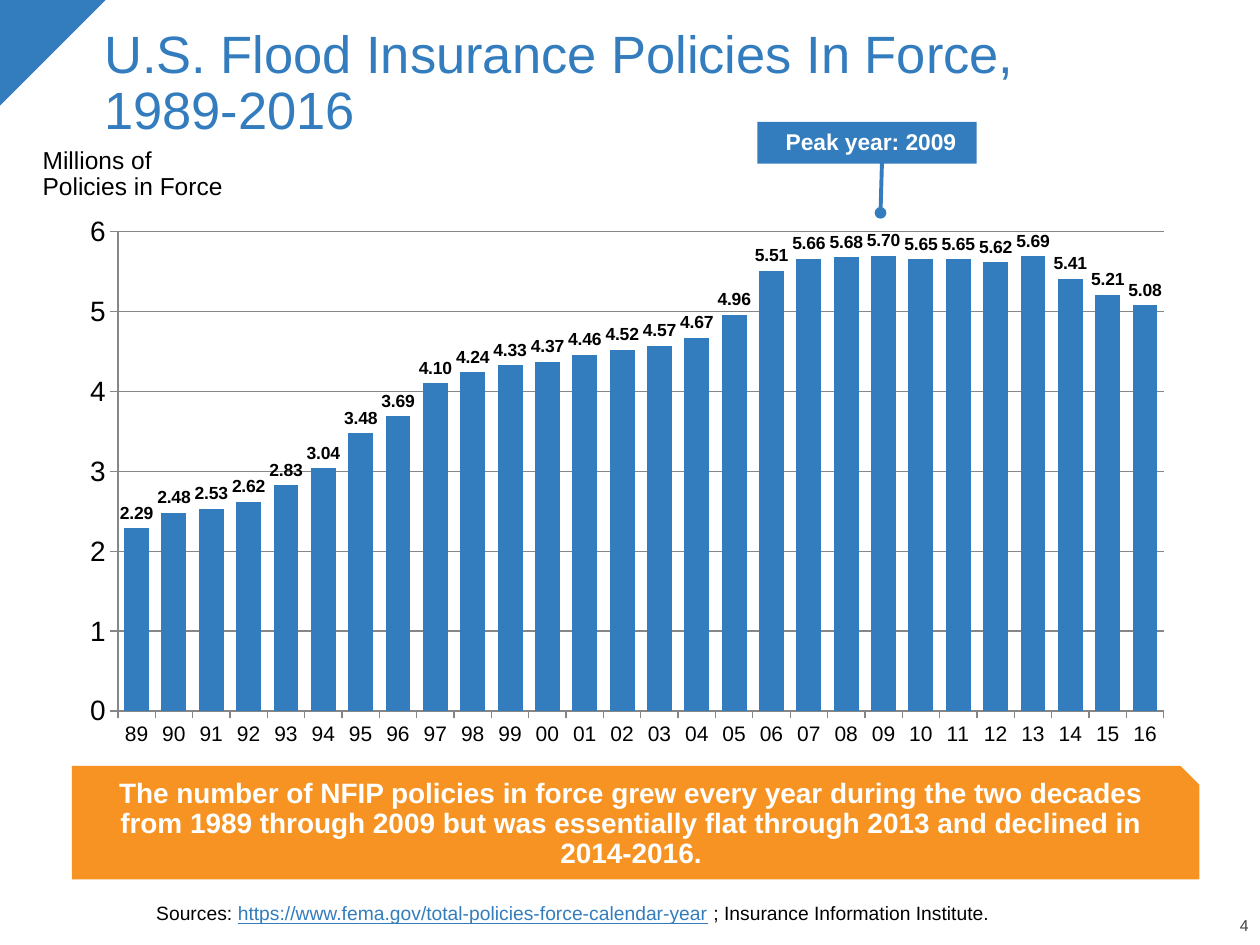
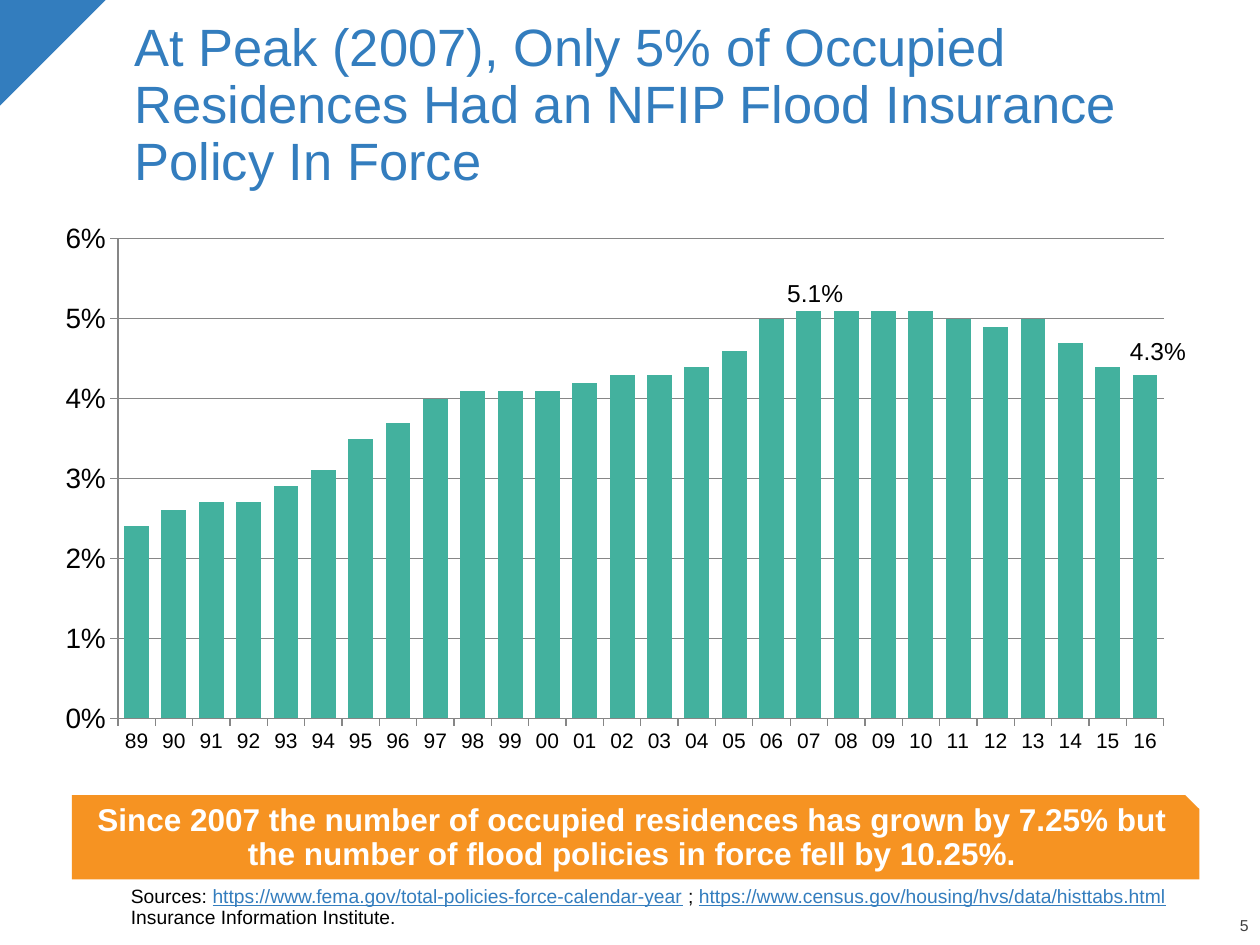
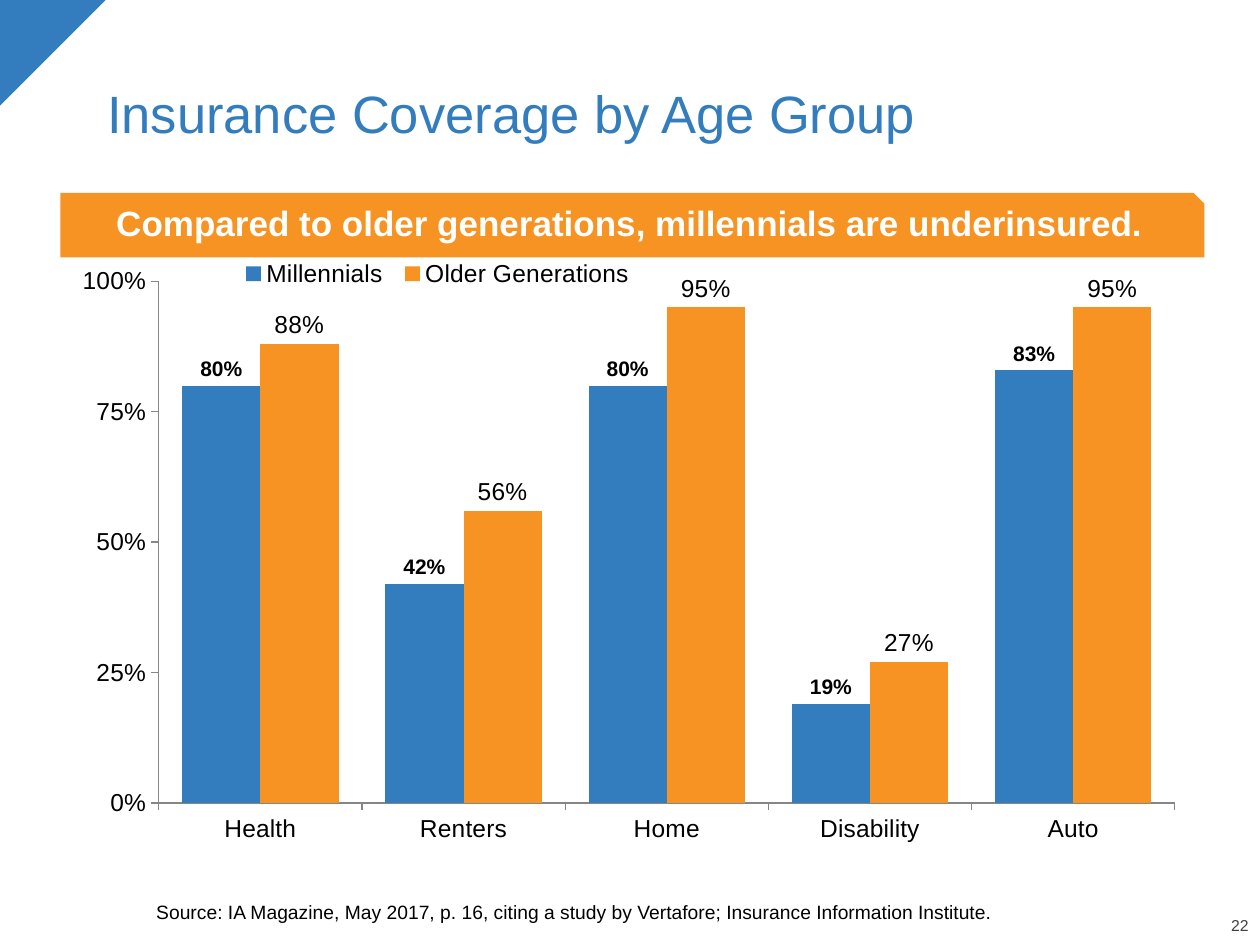
"""Build three slides on flood insurance policies and insurance coverage by age."""
from dataclasses import dataclass
from typing import NamedTuple, Optional

from lxml import etree
from pptx import Presentation
from pptx.chart.data import CategoryChartData
from pptx.dml.color import RGBColor
from pptx.enum.chart import (XL_CHART_TYPE, XL_LABEL_POSITION, XL_LEGEND_POSITION,
                             XL_TICK_LABEL_POSITION, XL_TICK_MARK)
from pptx.enum.shapes import MSO_CONNECTOR, MSO_SHAPE
from pptx.enum.text import MSO_ANCHOR, PP_ALIGN
from pptx.oxml.ns import qn
from pptx.util import Cm, Pt

COLUMNS = XL_CHART_TYPE.COLUMN_CLUSTERED
OUTSIDE_END = XL_LABEL_POSITION.OUTSIDE_END
LEGEND_TOP = XL_LEGEND_POSITION.TOP
LABELS_LOW = XL_TICK_LABEL_POSITION.LOW
TICK_OUT, TICK_NONE = XL_TICK_MARK.OUTSIDE, XL_TICK_MARK.NONE
STRAIGHT = MSO_CONNECTOR.STRAIGHT
TRIANGLE, SNIPPED, RECTANGLE = (MSO_SHAPE.RIGHT_TRIANGLE, MSO_SHAPE.SNIP_1_RECTANGLE,
                                MSO_SHAPE.RECTANGLE)
TOP, MIDDLE, BOTTOM = MSO_ANCHOR.TOP, MSO_ANCHOR.MIDDLE, MSO_ANCHOR.BOTTOM
LEFT, CENTER, RIGHT = PP_ALIGN.LEFT, PP_ALIGN.CENTER, PP_ALIGN.RIGHT

COLORS = {"blue": "337DBE", "orange": "F69322", "teal": "43B19E", "white": "FFFFFF",
          "black": "000000", "number": "404040", "axis": "868686"}
FONT = "Arial"
FEMA = "https://www.fema.gov/total-policies-force-calendar-year"
CENSUS = "https://www.census.gov/housing/hvs/data/histtabs.html"
YEARS = [f"{year % 100:02d}" for year in range(1989, 2017)]


class Box(NamedTuple):
    left: float
    top: float
    width: float
    height: float

    def lengths(self) -> list:
        return [Cm(value) for value in self]


class Layout(NamedTuple):
    x: float
    y: float
    w: float
    h: float


class Style(NamedTuple):
    size: float
    color: str = "black"
    bold: bool = False
    align: PP_ALIGN = LEFT
    anchor: MSO_ANCHOR = MIDDLE
    insets: tuple = (0.25, 0.13, 0.25, 0.13)


class Series(NamedTuple):
    name: str
    values: list
    color: str
    label_size: Optional[float] = None
    label_bold: bool = False


@dataclass
class ColumnChart:
    box: Box
    plot: Layout
    categories: list
    series: list
    maximum: float
    step: float
    axis_format: str
    label_format: str = "0%"
    size: float = 12
    value_size: float = 16
    gap: int = 50
    grid: bool = True
    legend: Optional[Layout] = None


@dataclass
class Page:
    number: int
    title: str
    title_box: Box
    source: list
    source_box: Box
    banner: str
    banner_box: Box
    banner_size: float
    chart: ColumnChart


NO_INSETS = (0, 0, 0, 0)
TITLE = Style(30, "blue", anchor=BOTTOM)
SOURCE = Style(11, anchor=BOTTOM, insets=NO_INSETS)
NUMBER = Style(9, "number", align=RIGHT, anchor=BOTTOM, insets=NO_INSETS)
CALLOUT = Style(13, "white", True, CENTER, insets=(0.4, 0.13, 0.25, 0.13))
NOTE = Style(14)

TREND_BOX = Box(0, 4.29, 23.77, 11.15)

PAGES = [
    Page(4, "U.S. Flood Insurance Policies In Force, 1989-2016", Box(1.85, 0.64, 21.13, 2.34),
         ["Sources: ", FEMA, " ; Insurance Information Institute."],
         Box(3.15, 18.01, 21.34, 0.64),
         "The number of NFIP policies in force grew every year during the two decades from "
         "1989 through 2009 but was essentially flat through 2013 and declined in 2014-2016.",
         Box(1.45, 15.44, 22.73, 2.29), 16,
         ColumnChart(TREND_BOX, Layout(0.1, 0.034, 0.887, 0.867), YEARS,
                     [Series("Series 1",
                             [2.29, 2.48, 2.53, 2.62, 2.83, 3.04, 3.48, 3.69, 4.1, 4.24,
                              4.33, 4.37, 4.46, 4.52, 4.57, 4.67, 4.96, 5.51, 5.66, 5.68,
                              5.7, 5.65, 5.65, 5.62, 5.69, 5.41, 5.21, 5.08],
                             "blue", 10, True)],
                     6, 1, "#,##0", "#,##0.00")),
    Page(5, "At Peak (2007), Only 5% of Occupied Residences Had an NFIP Flood Insurance "
         "Policy In Force", Box(2.46, 1.65, 21.62, 2.34),
         ["Sources: ", FEMA, " ; ", CENSUS, " Insurance Information Institute."],
         Box(2.64, 18.08, 21.74, 0.64),
         "Since 2007 the number of occupied residences has grown by 7.25% but the number "
         "of flood policies in force fell by 10.25%.",
         Box(1.45, 16.03, 22.73, 1.7), 18,
         ColumnChart(TREND_BOX, Layout(0.1, 0.047, 0.887, 0.867), YEARS,
                     [Series("Series 1",
                             [0.024, 0.026, 0.027, 0.027, 0.029, 0.031, 0.035, 0.037, 0.04,
                              0.041, 0.041, 0.041, 0.042, 0.043, 0.043, 0.044, 0.046, 0.05,
                              0.051, 0.051, 0.051, 0.051, 0.05, 0.049, 0.05, 0.047, 0.044,
                              0.043], "teal")],
                     0.06, 0.01, "0%")),
    Page(22, "Insurance Coverage by Age Group", Box(1.91, 1.27, 23.5, 1.78),
         ["Source: IA Magazine, May 2017, p. 16, citing a study by Vertafore; "
          "Insurance Information Institute."],
         Box(3.15, 17.48, 21.34, 1.14),
         "Compared to older generations, millennials are underinsured.",
         Box(1.22, 3.89, 23.06, 1.3), 20,
         ColumnChart(Box(1.22, 5.18, 23.04, 13.64), Layout(0.086, 0.036, 0.889, 0.771),
                     ["Health", "Renters", "Home", "Disability", "Auto"],
                     [Series("Millennials", [0.8, 0.42, 0.8, 0.19, 0.83], "blue", 12, True),
                      Series("Older Generations", [0.88, 0.56, 0.95, 0.27, 0.95],
                             "orange", 14)],
                     1, 0.25, "0%", size=14, value_size=14, gap=60, grid=False,
                     legend=Layout(0.15, 0, 0.36, 0.05))),
]


def rgb(name: str) -> RGBColor:
    return RGBColor.from_string(COLORS[name])


def set_font(font, size: float, color: str, bold: bool = False) -> None:
    font.name, font.size, font.bold = FONT, Pt(size), bold
    font.color.rgb = rgb(color)


def write(sp, parts: list, style: Style) -> None:
    tf = sp.text_frame
    tf.word_wrap = True
    tf.vertical_anchor = style.anchor
    tf.margin_left, tf.margin_top, tf.margin_right, tf.margin_bottom = map(Cm, style.insets)
    p = tf.paragraphs[0]
    p.text = parts[0]
    for part in parts[1:]:
        p.add_run().text = part
    p.alignment, p.line_spacing = style.align, 0.9
    for r in p.runs:
        is_address = r.text.startswith("https")
        set_font(r.font, style.size, "blue" if is_address else style.color, style.bold)
        if is_address:
            r.font.underline = True


def add_text(s, box: Box, parts: list, style: Style) -> None:
    write(s.shapes.add_textbox(*box.lengths()), parts, style)


def add_filled(s, kind: MSO_SHAPE, box: Box, color: str):
    sp = s.shapes.add_shape(kind, *box.lengths())
    sp.shadow.inherit = False
    sp.fill.solid()
    sp.fill.fore_color.rgb = rgb(color)
    sp.line.fill.background()
    return sp


def set_layout(parent, index: int, layout: Layout, inner: bool = False) -> None:
    for old in parent.findall(qn("c:layout")):
        parent.remove(old)
    node = etree.Element(qn("c:layout"))
    manual = etree.SubElement(node, qn("c:manualLayout"))
    settings = [("layoutTarget", "inner")] if inner else []
    settings += [("xMode", "edge"), ("yMode", "edge")]
    settings += [(key, str(value)) for key, value in zip(layout._fields, layout)]
    for tag, value in settings:
        etree.SubElement(manual, qn(f"c:{tag}")).set("val", value)
    parent.insert(index, node)


def add_chart(s, spec: ColumnChart) -> None:
    data = CategoryChartData(number_format=spec.label_format)
    data.categories = spec.categories
    for series in spec.series:
        data.add_series(series.name, series.values)
    chart = s.shapes.add_chart(COLUMNS, *spec.box.lengths(), data).chart
    chart.has_title = False
    set_font(chart.font, spec.size, "black")

    plot = chart.plots[0]
    plot.gap_width, plot.overlap, plot.vary_by_categories = spec.gap, 0, False
    for drawn, series in zip(plot.series, spec.series):
        drawn.format.fill.solid()
        drawn.format.fill.fore_color.rgb = rgb(series.color)
        drawn.invert_if_negative = False
        if series.label_size:
            labels = drawn.data_labels
            labels.show_value, labels.position = True, OUTSIDE_END
            labels.number_format, labels.number_format_is_linked = spec.label_format, False
            set_font(labels.font, series.label_size, "black", series.label_bold)

    values, categories = chart.value_axis, chart.category_axis
    values.minimum_scale, values.maximum_scale = 0, spec.maximum
    values.major_unit, values.has_major_gridlines = spec.step, spec.grid
    values.tick_labels.number_format = spec.axis_format
    values.tick_labels.number_format_is_linked = False
    set_font(values.tick_labels.font, spec.value_size, "black")
    categories.tick_label_position = LABELS_LOW
    lines = [values.format.line, categories.format.line]
    if spec.grid:
        lines.append(values.major_gridlines.format.line)
    for line in lines:
        line.color.rgb, line.width = rgb("axis"), Pt(0.75)
    for axis in (values, categories):
        axis.major_tick_mark, axis.minor_tick_mark = TICK_OUT, TICK_NONE

    set_layout(chart._chartSpace.find(".//" + qn("c:plotArea")), 0, spec.plot, inner=True)
    chart.has_legend = spec.legend is not None
    if spec.legend:
        chart.legend.position = LEGEND_TOP
        chart.legend.include_in_layout = False
        set_font(chart.legend.font, spec.size, "black")
        set_layout(chart.legend._element, 1, spec.legend)


def add_page(prs, page: Page):
    s = prs.slides.add_slide(prs.slide_layouts[6])
    add_filled(s, TRIANGLE, Box(0, 0, 2.13, 2.13), "blue").rotation = 90
    add_text(s, Box(23.95, 18.52, 1.22, 0.33), [str(page.number)], NUMBER)
    add_text(s, page.title_box, [page.title], TITLE)
    add_text(s, page.source_box, page.source, SOURCE)
    add_chart(s, page.chart)
    banner = add_filled(s, SNIPPED, page.banner_box, "orange")
    write(banner, [page.banner],
          Style(page.banner_size, "white", True, CENTER, insets=(0.25, 0.13, 0.25, 0.25)))
    return s


def add_peak_callout(s) -> None:
    pointer = s.shapes.add_connector(STRAIGHT, Cm(17.78), Cm(3.25), Cm(17.75), Cm(4.29))
    pointer.line.color.rgb, pointer.line.width = rgb("blue"), Pt(2.25)
    etree.SubElement(pointer.line._get_or_add_ln(), qn("a:tailEnd")).set("type", "oval")
    etree.SubElement(pointer._element.spPr, qn("a:effectLst"))
    write(add_filled(s, RECTANGLE, Box(15.27, 2.46, 4.42, 0.84), "blue"),
          ["Peak year: 2009"], CALLOUT)


def main() -> None:
    prs = Presentation()
    prs.slide_width, prs.slide_height = Cm(25.4), Cm(19.05)
    policies, share, _ = [add_page(prs, page) for page in PAGES]
    add_peak_callout(policies)
    add_text(policies, Box(0.61, 2.84, 4.5, 1.35), ["Millions of Policies in Force"], NOTE)
    add_text(share, Box(22.53, 6.71, 1.68, 0.79), ["4.3%"], NOTE)
    add_text(share, Box(15.62, 5.54, 1.68, 0.79), ["5.1%"], NOTE)
    prs.save("out.pptx")


if __name__ == "__main__":
    main()
